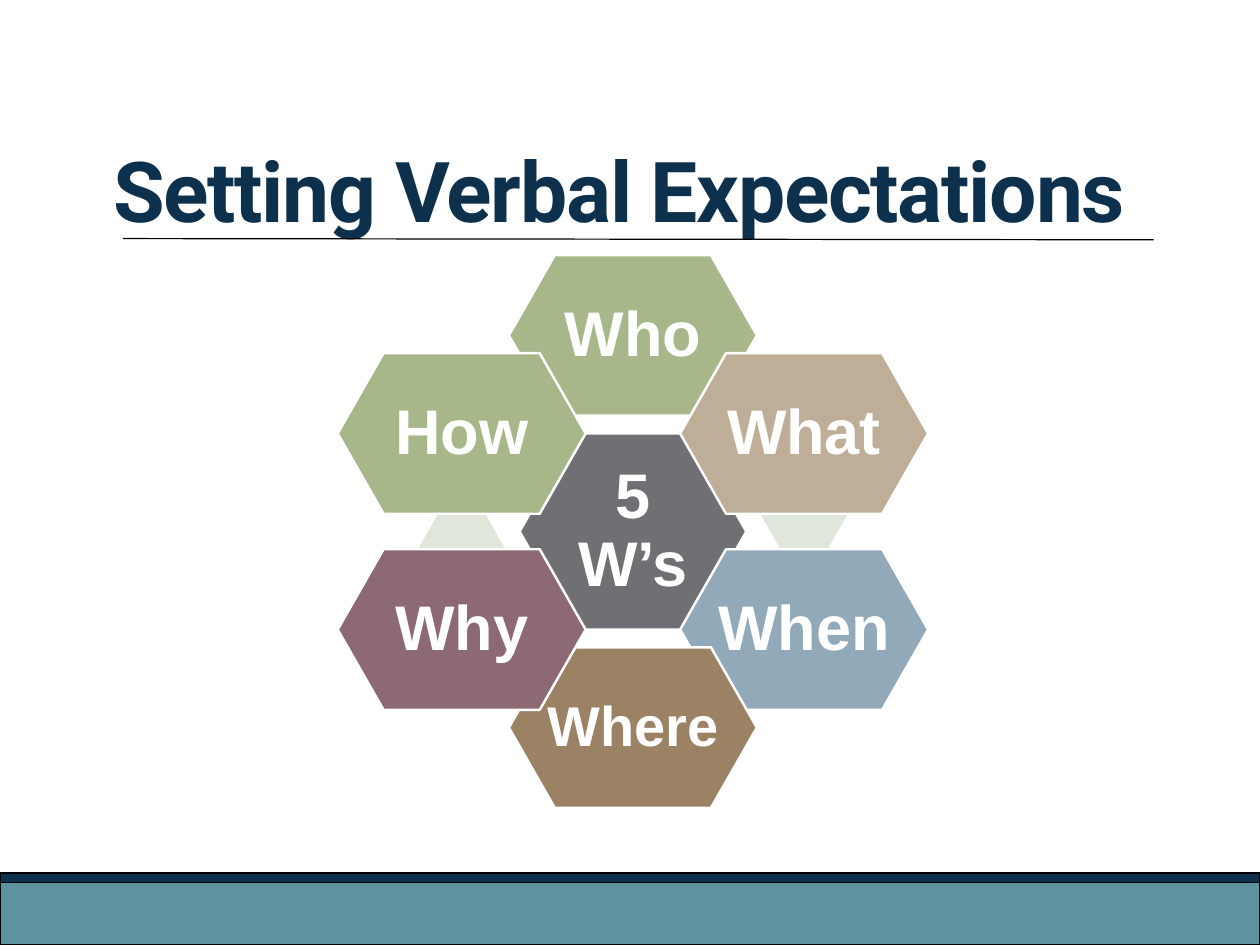
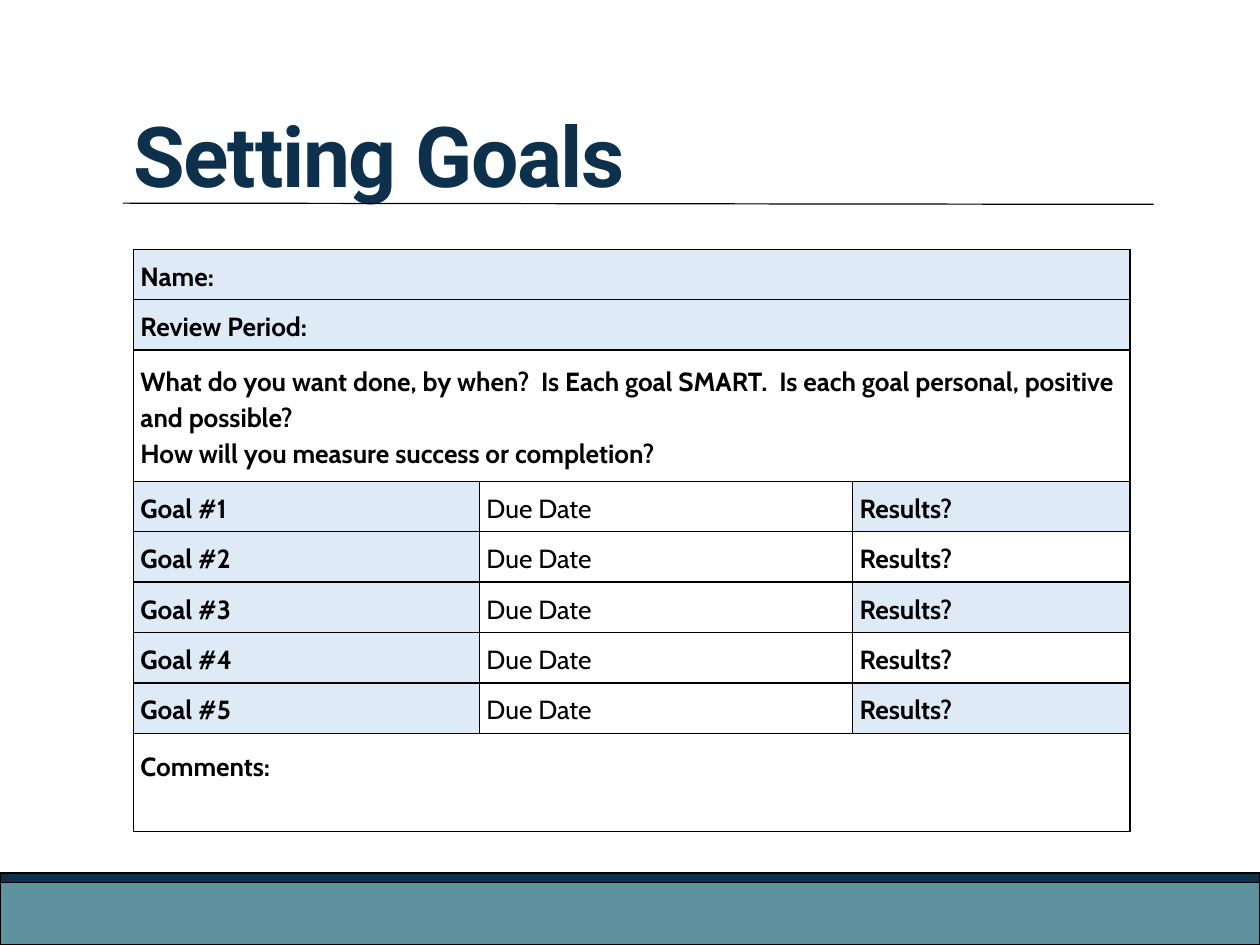
from dataclasses import dataclass

from lxml.etree import SubElement
from pptx import Presentation
from pptx.dml.color import RGBColor
from pptx.enum.shapes import MSO_CONNECTOR, MSO_SHAPE
from pptx.enum.text import MSO_ANCHOR, MSO_AUTO_SIZE, PP_ALIGN
from pptx.oxml.ns import qn
from pptx.shapes.autoshape import Shape
from pptx.slide import Slide
from pptx.table import _Cell as Cell
from pptx.text.text import TextFrame
from pptx.util import Inches, Pt

# Shared look
NAVY, TEAL, BLACK, WHITE = "0D314C", "5E929E", "000000", "FFFFFF"
PALE_BLUE, PALE_GREEN, GRAY = "DEEAF6", "E1E6DA", "6F6F74"
SLIDE_WIDTH, SLIDE_HEIGHT = 10.67, 8
HEXAGON_SLANT = 0.286


@dataclass(frozen=True)
class Tile:
    """A hexagon placed by column and row steps from the hub."""
    label: str
    fill: str
    column: int
    row: int
    size: float = 38.4


@dataclass(frozen=True)
class Entry:
    """A table cell."""
    lines: tuple[str, ...]
    fill: str | None = None
    bold: bool = True


TILES = [
    Tile("Who", "A7B789", 0, -2),
    Tile("What", "BEAE98", 1, -1),
    Tile("When", "92A9B9", 1, 1),
    Tile("Where", "9C8265", 0, 2, 34.1),
    Tile("Why", "8D6974", -1, 1),
    Tile("How", "A7B789", -1, -1),
]
HUB_X, HUB_Y = 5.36, 4.5
COLUMN_STEP, ROW_STEP = 1.45, 0.83


def rgb(value: str) -> RGBColor:
    return RGBColor.from_string(value)


def set_insets(target: TextFrame | Cell, inset: float) -> None:
    target.margin_left = target.margin_right = Inches(inset)
    target.margin_top = target.margin_bottom = Inches(inset)


def write(frame: TextFrame, *lines: str, font: str, size: float, color: str,
          leading: float, bold: bool = True, tracking: float = 0,
          align: PP_ALIGN = PP_ALIGN.LEFT) -> None:
    """Fill a frame with one paragraph for each line."""
    for index, line in enumerate(lines):
        para = frame.add_paragraph() if index else frame.paragraphs[0]
        para.alignment = align
        para.line_spacing = Pt(leading)
        para.space_before = Pt(0)
        span = para.add_run()
        span.text = line
        span.font.name, span.font.size, span.font.bold = font, Pt(size), bold
        span.font.color.rgb = rgb(color)
        if tracking:
            span.font._element.set("spc", str(round(tracking * 100)))


def add_block(slide: Slide, kind: MSO_SHAPE, left: float, top: float,
              width: float, height: float, fill: str,
              outline: str | None = None, weight: float = 1) -> Shape:
    block = slide.shapes.add_shape(kind, Inches(left), Inches(top),
                                   Inches(width), Inches(height))
    block.shadow.inherit = False
    block.fill.solid()
    block.fill.fore_color.rgb = rgb(fill)
    if outline:
        block.line.color.rgb = rgb(outline)
        block.line.width = Pt(weight)
    else:
        block.line.fill.background()
    return block


def add_titled_slide(deck: Presentation, text: str, left: float, bottom: float) -> Slide:
    """Start a slide with its title, rule and footer bands."""
    slide = deck.slides.add_slide(deck.slide_layouts[5])

    # Footer bands
    for top, height, fill in ((7.47, 0.53, TEAL), (7.39, 0.08, NAVY)):
        add_block(slide, MSO_SHAPE.RECTANGLE, 0, top, SLIDE_WIDTH, height, fill, BLACK)

    # Rule under the title
    rule = slide.shapes.add_connector(MSO_CONNECTOR.STRAIGHT, Inches(1.04), Inches(bottom - 0.01),
                                      Inches(9.77), Inches(bottom))
    rule.line.color.rgb = rgb(BLACK)
    rule.line.width = Pt(0.75)
    SubElement(rule._element.spPr, qn("a:effectLst"))

    # Title
    title = slide.shapes.title
    title.left, title.top = Inches(left), Inches(bottom - 1.63)
    title.width, title.height = Inches(8.8), Inches(1.63)
    frame = title.text_frame
    frame.auto_size = MSO_AUTO_SIZE.NONE
    frame.word_wrap = True
    frame.vertical_anchor = MSO_ANCHOR.BOTTOM
    set_insets(frame, 0)
    write(frame, text, font="Roboto", size=51.2, color=NAVY, leading=52.2, tracking=-0.8)
    return slide


def add_hexagon(slide: Slide, center_x: float, center_y: float, width: float, height: float,
                fill: str, label: str = "", size: float = 38.4) -> None:
    hexagon = add_block(slide, MSO_SHAPE.HEXAGON, center_x - width / 2, center_y - height / 2,
                        width, height, fill, WHITE if label else None, 1.5)
    hexagon.adjustments[0] = HEXAGON_SLANT
    if label:
        frame = hexagon.text_frame
        frame.word_wrap = True
        frame.vertical_anchor = MSO_ANCHOR.MIDDLE
        set_insets(frame, 0)
        write(frame, label, font="Arial", size=size, color=WHITE,
              leading=round(size * 1.08, 1), align=PP_ALIGN.CENTER)


def add_cell_borders(cell: Cell) -> None:
    properties = cell._tc.get_or_add_tcPr()
    for index, side in enumerate(("a:lnL", "a:lnR", "a:lnT", "a:lnB")):
        border = properties.makeelement(qn(side), {"w": str(Pt(1))})
        fill = SubElement(border, qn("a:solidFill"))
        SubElement(fill, qn("a:srgbClr"), val=BLACK)
        properties.insert(index, border)


def fill_cell(cell: Cell, entry: Entry) -> None:
    set_insets(cell, 0.06)
    cell.vertical_anchor = MSO_ANCHOR.MIDDLE
    write(cell.text_frame, *entry.lines, font="Cabin", size=16, color=BLACK,
          leading=22.1, bold=entry.bold)


def build_expectations(deck: Presentation) -> None:
    slide = add_titled_slide(deck, "Setting Verbal Expectations", 0.96, 2.03)

    # Hub and the two accents between side tiles
    add_hexagon(slide, HUB_X, HUB_Y, 1.92, 1.66, GRAY, "5 W’s")
    for side in (1, -1):
        add_hexagon(slide, HUB_X + side * COLUMN_STEP, HUB_Y - side * 0.14,
                    0.73, 0.63, PALE_GREEN)

    # Ring of tiles
    for tile in TILES:
        add_hexagon(slide, HUB_X + tile.column * COLUMN_STEP, HUB_Y + tile.row * ROW_STEP,
                    2.1, 1.36, tile.fill, tile.label, tile.size)


def build_goals(deck: Presentation) -> None:
    slide = add_titled_slide(deck, "Setting Goals", 1.13, 1.73)

    # Rows with a single entry span the table
    rows = [
        [Entry(("Name:",), PALE_BLUE)],
        [Entry(("Review Period:",), PALE_BLUE)],
        [Entry(("What do you want done, by when?  Is Each goal SMART.  "
                "Is each goal personal, positive and possible?",
                "How will you measure success or completion?"), WHITE)],
        *([Entry((f"Goal #{number}",), PALE_BLUE),
           Entry(("Due Date",), bold=False),
           Entry(("Results?",), PALE_BLUE if number % 2 else None)]
          for number in range(1, 6)),
        [Entry(("Comments:",))],
    ]
    widths = (2.93, 3.16, 2.35)
    heights = (0.35, 0.35, 1.11, *[0.35] * 5, 0.83)
    table = slide.shapes.add_table(len(rows), len(widths), Inches(1.13), Inches(2.11),
                                   Inches(sum(widths)), Inches(sum(heights))).table
    table.first_row = table.horz_banding = False
    for column, width in zip(table.columns, widths):
        column.width = Inches(width)

    for index, (entries, height) in enumerate(zip(rows, heights)):
        table.rows[index].height = Inches(height)
        cells = [table.cell(index, column) for column in range(len(widths))]
        if len(entries) == 1:
            cells[0].merge(cells[-1])
        for column, cell in enumerate(cells):
            entry = entries[min(column, len(entries) - 1)]
            if entry.fill:
                cell.fill.solid()
                cell.fill.fore_color.rgb = rgb(entry.fill)
            else:
                cell.fill.background()
            add_cell_borders(cell)
        for cell, entry in zip(cells, entries):
            fill_cell(cell, entry)

    # Comments start high, leaving room to write
    comments = table.cell(len(rows) - 1, 0)
    comments.vertical_anchor = MSO_ANCHOR.TOP
    comments.margin_top = Inches(0.11)


def main() -> None:
    deck = Presentation()
    deck.slide_width, deck.slide_height = Inches(SLIDE_WIDTH), Inches(SLIDE_HEIGHT)
    build_expectations(deck)
    build_goals(deck)
    deck.save("out.pptx")


if __name__ == "__main__":
    main()
